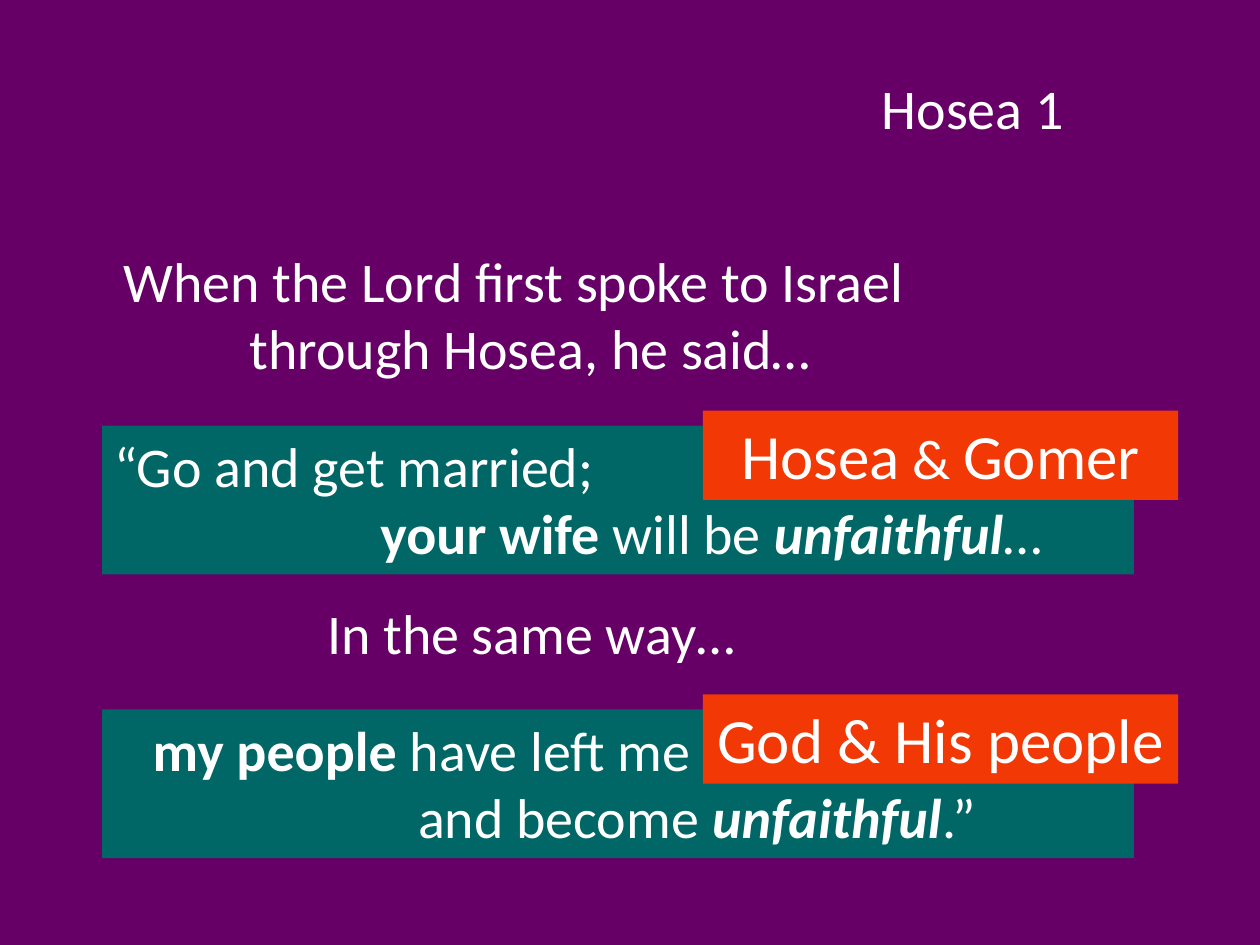
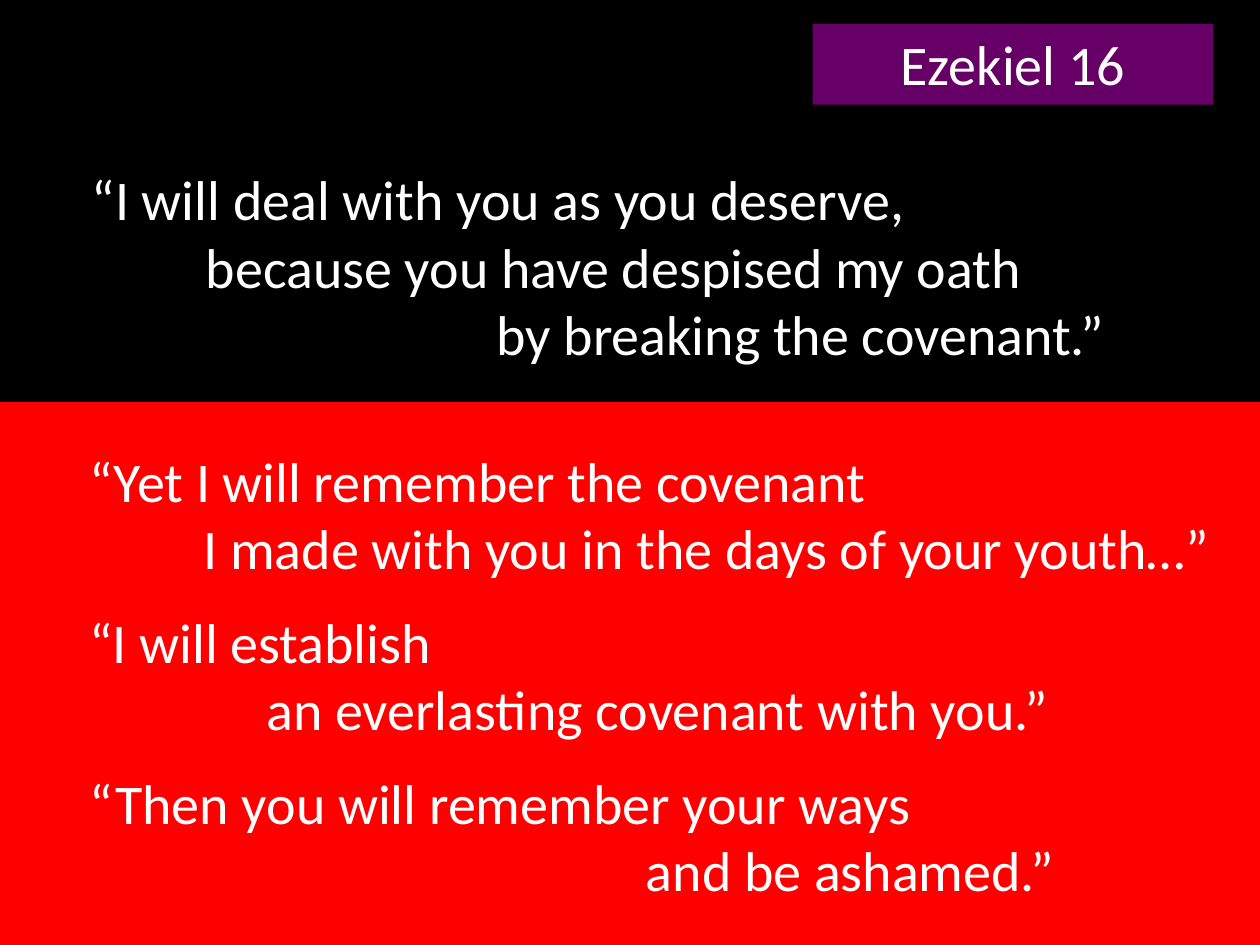
from pptx import Presentation
from pptx.dml.color import RGBColor
from pptx.enum.shapes import MSO_SHAPE
from pptx.enum.text import MSO_ANCHOR, MSO_AUTO_SIZE, PP_ALIGN
from pptx.util import Cm, Pt

PURPLE = RGBColor(0x66, 0x00, 0x66)
TEAL = RGBColor(0x00, 0x66, 0x66)
ORANGE = RGBColor(0xF1, 0x38, 0x05)
RED = RGBColor(0xFF, 0x00, 0x00)
BLACK = RGBColor(0x00, 0x00, 0x00)
WHITE = RGBColor(0xFF, 0xFF, 0xFF)
RECT = MSO_SHAPE.RECTANGLE
TOP = MSO_ANCHOR.TOP
GROW = MSO_AUTO_SIZE.SHAPE_TO_FIT_TEXT
LEFT, CENTER = PP_ALIGN.LEFT, PP_ALIGN.CENTER
FONT = "Calibri"
WIDTH, HEIGHT = 25.4, 19.05
LINE, TWO, THREE = 1.63, 3.0, 4.37


def block(slide, box, fill):
    """Add a plain filled rectangle."""
    shape = slide.shapes.add_shape(RECT, *map(Cm, box))
    shape.shadow.inherit = False
    shape.fill.solid()
    shape.fill.fore_color.rgb = fill
    shape.line.fill.background()
    return shape


def write(slide, box, *lines, fill=None, align=LEFT, size=32, right=0.25):
    """Write lines, each a string or (indent, runs), in a box with an optional fill."""
    if fill is None:
        shape = slide.shapes.add_textbox(*map(Cm, box))
    else:
        shape = block(slide, box, fill)
    frame = shape.text_frame
    frame.word_wrap = True
    frame.auto_size = GROW
    frame.vertical_anchor = TOP
    frame.margin_right = Cm(right)
    for i, line in enumerate(lines):
        indent, runs = (0, [line]) if isinstance(line, str) else line
        para = frame.paragraphs[0] if i == 0 else frame.add_paragraph()
        para.alignment = align
        props = para._p.get_or_add_pPr()
        props.set("marL", str(Cm(indent)))
        props.set("indent", "0")
        for part in runs:
            text, style = (part, {}) if isinstance(part, str) else part
            run = para.add_run()
            run.text = text
            font = run.font
            font.name = FONT
            font.size = Pt(style.get("size", size))
            font.bold = style.get("bold", False)
            font.italic = style.get("italic", False)
            font.color.rgb = WHITE


def label(slide, box, text):
    """Place the purple label that names the passage."""
    write(slide, box, text, fill=PURPLE, align=CENTER)


def quote(slide, box, lines, tag):
    """Place a teal quote with an orange tag over its top right corner."""
    x, y, w, h = box
    write(slide, box, *lines, fill=TEAL)
    write(slide, (x + 12.11, y - 0.3, 9.58, 1.8), (0, tag),
          fill=ORANGE, align=CENTER, size=36)


def start(deck, color):
    """Add a blank slide with a solid background."""
    slide = deck.slides.add_slide(deck.slide_layouts[6])
    slide.background.fill.solid()
    slide.background.fill.fore_color.rgb = color
    return slide


def hosea(deck):
    """Build the slide that pairs the marriage with the people."""
    bold = {"bold": True}
    strong = {"bold": True, "italic": True}
    slide = start(deck, PURPLE)
    label(slide, (15.9, 1.35, 7.42, LINE), "Hosea 1")
    write(slide, (2.24, 4.85, 22.53, TWO),
          "When the Lord first spoke to Israel",
          (2.54, ["through Hosea, he said…"]))
    quote(slide, (2.06, 8.58, 20.8, TWO), [
        "“Go and get married;",
        (5.36, [("your wife ", bold), "will be ", ("unfaithful", strong), "…"]),
    ], ["Hosea", (" & ", {"size": 32}), "Gomer"])
    write(slide, (3.25, 11.94, 16.2, LINE), "In the same way…",
          align=CENTER, right=1.52)
    quote(slide, (2.06, 14.3, 20.8, TWO), [
        (0.77, [("my people ", bold), "have left me"]),
        (6.12, ["and become ", ("unfaithful", strong), ".”"]),
    ], ["God & His people"])


def promise(slide, box):
    """Place the red band with its three verses at an equal pitch."""
    x, y, w, h = box
    verses = [
        (23.67, "“Yet I will remember the covenant",
         2.3, "I made with you in the days of your youth…”"),
        (20.17, "“I will establish",
         3.57, "an everlasting covenant with you.”"),
        (20.17, "“Then you will remember your ways",
         11.22, "and be ashamed.”"),
    ]
    block(slide, box, RED)
    for i, (wide, first, indent, second) in enumerate(verses):
        write(slide, (x + 1.55, y + 0.78 + i * 3.24, wide, TWO),
              first, (indent, [second]))


def ezekiel(deck):
    """Build the slide that sets judgement above promise."""
    slide = start(deck, BLACK)
    promise(slide, (0, 8.1, WIDTH, HEIGHT - 8.1))
    write(slide, (1.6, 3.2, 22.2, THREE),
          "“I will deal with you as you deserve,",
          (2.3, ["because you have despised my oath"]),
          (8.16, ["by breaking the covenant.”"]))
    label(slide, (16.38, 0.48, 8.08, LINE), "Ezekiel 16")


def main():
    """Build and save the deck."""
    deck = Presentation()
    deck.slide_width, deck.slide_height = Cm(WIDTH), Cm(HEIGHT)
    hosea(deck)
    ezekiel(deck)
    deck.save("out.pptx")


if __name__ == "__main__":
    main()
